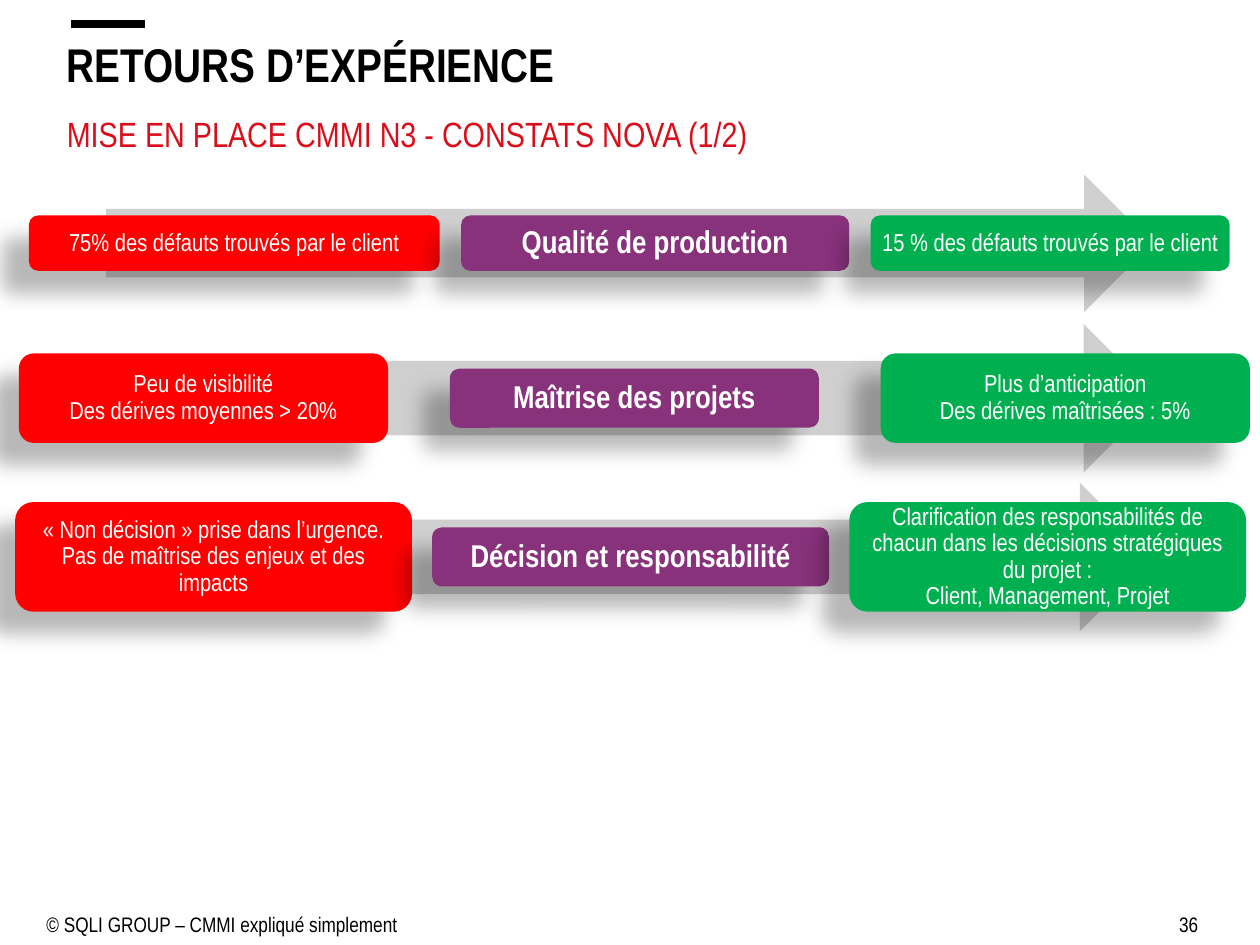
from dataclasses import dataclass
from typing import Any

from lxml import etree
from pptx import Presentation
from pptx import util as u
from pptx.dml.color import RGBColor
from pptx.enum import shapes, text
from pptx.oxml import ns

FONT = "Arial Narrow"
COLORS = {
    "black": "000000",
    "white": "FFFFFF",
    "subtitle": "DA0E1A",
    "arrow": "CFCFD0",
    "before": "FF0000",
    "topic": "88327C",
    "after": "00B050",
}
SHADOW = {
    "blurRad": u.Pt(11.8),
    "dist": u.Pt(19.7),
    "dir": 141 * 60000,
    "algn": "tr",
    "rotWithShape": 0,
}
SHADOW_ALPHA = 28000
ARROW_WIDTH = 8.31


@dataclass
class Comparison:
    center: float
    arrow_left: float
    arrow_height: float
    left: float
    widths: tuple[float, float, float]
    gap: float
    side_height: float
    topic_height: float
    before: str
    topic: str
    after: str


COMPARISONS = [
    Comparison(
        1.93, 0.84, 1.09, 0.23, (3.26, 3.08, 2.85), 0.17, 0.44, 0.44,
        "75% des défauts trouvés par le client",
        "Qualité de production",
        "15 % des défauts trouvés par le client",
    ),
    Comparison(
        3.16, 0.88, 1.18, 0.15, (2.93, 2.93, 2.93), 0.49, 0.71, 0.47,
        "Peu de visibilité\vDes dérives moyennes > 20%",
        "Maîtrise des projets",
        "Plus d’anticipation\vDes dérives maîtrisées : 5%",
    ),
    Comparison(
        4.42, 0.85, 1.18, 0.12, (3.15, 3.15, 3.15), 0.16, 0.87, 0.47,
        "« Non décision » prise dans l’urgence.\vPas de maîtrise des enjeux et des impacts",
        "Décision et responsabilité",
        "Clarification des responsabilités de chacun dans les décisions stratégiques"
        " du projet :\vClient, Management, Projet",
    ),
]


def color(name: str) -> RGBColor:
    return RGBColor.from_string(COLORS[name])


def apply_format(target: Any, values: dict[str, Any]) -> None:
    for name, value in values.items():
        setattr(target, name, value)


def write(
    shape: Any,
    content: str,
    size: float,
    color_name: str,
    bold: bool = False,
    anchor: Any = text.MSO_ANCHOR.MIDDLE,
    alignment: Any = text.PP_ALIGN.LEFT,
    line_spacing: float = 1.0,
    inset: float = 0.1,
    vertical_inset: float = 0.05,
) -> None:
    frame = shape.text_frame
    frame.text = content
    apply_format(frame, {
        "word_wrap": True,
        "auto_size": text.MSO_AUTO_SIZE.NONE,
        "vertical_anchor": anchor,
        "margin_left": u.Inches(inset),
        "margin_right": u.Inches(inset),
        "margin_top": u.Inches(vertical_inset),
        "margin_bottom": u.Inches(vertical_inset),
    })
    paragraph = frame.paragraphs[0]
    apply_format(paragraph, {
        "alignment": alignment,
        "line_spacing": line_spacing,
        "space_before": u.Pt(0),
    })
    for run in paragraph.runs:
        apply_format(run.font, {"name": FONT, "size": u.Pt(size), "bold": bold})
        run.font.color.rgb = color(color_name)


def place(shape: Any, left: float, top: float, width: float, height: float) -> None:
    apply_format(shape, {
        "left": u.Inches(left),
        "top": u.Inches(top),
        "width": u.Inches(width),
        "height": u.Inches(height),
    })


def add_filled(
    slide: Any, kind: Any, left: float, center: float, width: float, height: float, fill: str
) -> Any:
    shape = slide.shapes.add_shape(
        kind, u.Inches(left), u.Inches(center - height / 2), u.Inches(width), u.Inches(height)
    )
    shape.shadow.inherit = False
    shape.fill.solid()
    shape.fill.fore_color.rgb = color(fill)
    shape.line.fill.background()
    return shape


def add_shadow(shape: Any) -> None:
    effects = shape._element.spPr.find(ns.qn("a:effectLst"))
    shadow = etree.SubElement(effects, ns.qn("a:outerShdw"))
    for name, value in SHADOW.items():
        shadow.set(name, str(value))
    shade = etree.SubElement(shadow, ns.qn("a:srgbClr"), val=COLORS["black"])
    etree.SubElement(shade, ns.qn("a:alpha"), val=str(SHADOW_ALPHA))


def add_comparison(slide: Any, row: Comparison) -> None:
    add_filled(
        slide, shapes.MSO_SHAPE.RIGHT_ARROW,
        row.arrow_left, row.center, ARROW_WIDTH, row.arrow_height, "arrow",
    )
    left = row.left
    for role, width in zip(("before", "topic", "after"), row.widths):
        is_topic = role == "topic"
        height = row.topic_height if is_topic else row.side_height
        box = add_filled(
            slide, shapes.MSO_SHAPE.ROUNDED_RECTANGLE, left, row.center, width, height, role
        )
        add_shadow(box)
        inset = 0.07 if is_topic else 0.06
        write(
            box, getattr(row, role), 18 if is_topic else 14, "white", bold=is_topic,
            alignment=text.PP_ALIGN.CENTER, line_spacing=0.9,
            inset=inset, vertical_inset=inset,
        )
        left += width + row.gap


def add_footer(slide: Any, content: str, left: float, width: float) -> None:
    box = slide.shapes.add_textbox(
        u.Inches(left), u.Inches(7.17), u.Inches(width), u.Inches(0.33)
    )
    write(box, content, 12, "black")


def add_accent(slide: Any) -> None:
    accent = slide.shapes.add_connector(
        shapes.MSO_CONNECTOR.STRAIGHT,
        u.Inches(0.56), u.Inches(0.19), u.Inches(1.15), u.Inches(0.19),
    )
    accent.line.width = u.Pt(4.5)
    accent.line.color.rgb = color("black")
    etree.SubElement(accent._element.spPr, ns.qn("a:effectLst"))


def main() -> None:
    presentation = Presentation()
    apply_format(presentation, {"slide_width": u.Inches(10), "slide_height": u.Inches(7.5)})
    slide = presentation.slides.add_slide(presentation.slide_layouts.get_by_name("Section Header"))
    title, subtitle = slide.shapes.title, slide.placeholders[1]
    place(title, 0.43, 0.31, 9.19, 0.39)
    write(title, "RETOURS D’EXPÉRIENCE", 27, "black", bold=True)
    place(subtitle, 0.43, 0.76, 9.19, 0.55)
    write(
        subtitle, "MISE EN PLACE CMMI N3 - CONSTATS NOVA (1/2)", 20, "subtitle",
        anchor=text.MSO_ANCHOR.TOP, line_spacing=1.25,
    )
    add_accent(slide)
    for row in COMPARISONS:
        add_comparison(slide, row)
    add_footer(slide, "© SQLI GROUP – CMMI expliqué simplement", 0.27, 5.53)
    add_footer(slide, "36", 9.26, 0.63)
    presentation.save("out.pptx")


if __name__ == "__main__":
    main()
